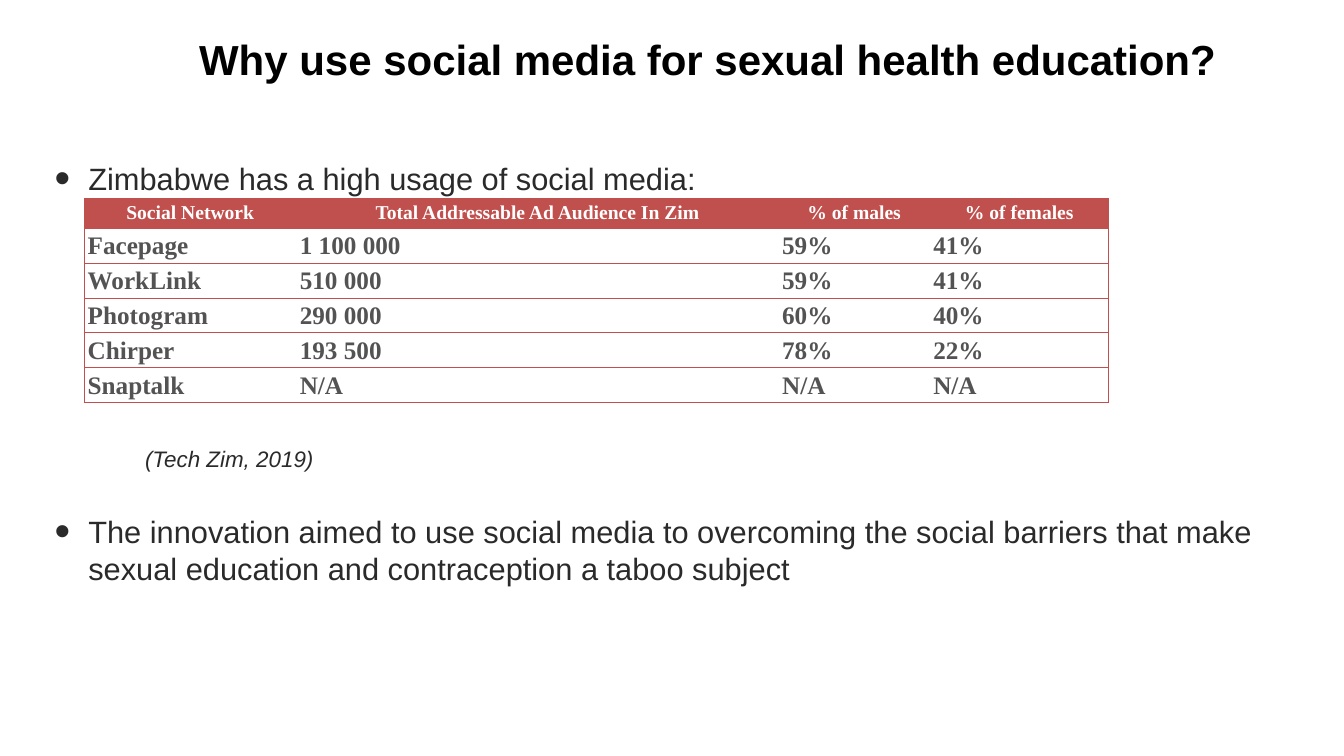
from pptx import Presentation
from pptx.dml.color import RGBColor
from pptx.enum.text import MSO_ANCHOR, PP_ALIGN
from pptx.oxml import parse_xml
from pptx.oxml.ns import nsdecls
from pptx.util import Cm, Pt

TOP, MIDDLE = MSO_ANCHOR.TOP, MSO_ANCHOR.MIDDLE
LEFT, CENTER = PP_ALIGN.LEFT, PP_ALIGN.CENTER
RED, WHITE, BLACK = "C0504D", "FFFFFF", "000000"
INK, GREY = "2A2A2A", "535353"
SANS, SERIF = "Arial", "Times New Roman"

HEADS = ["Social Network", "Total Addressable Ad Audience In Zim",
         "% of males", "% of females"]
USAGE = [
    ["Facepage", "1 100 000", "59%", "41%"],
    ["WorkLink", "510 000", "59%", "41%"],
    ["Photogram", "290 000", "60%", "40%"],
    ["Chirper", "193 500", "78%", "22%"],
    ["Snaptalk", "N/A", "N/A", "N/A"],
]
WIDTHS = [10.69, 24.31, 7.62, 9.02]
ROW = 1.5


def color(code):
    return RGBColor.from_string(code)


class Deck:
    """Holds the style and the current slide, and adds its elements."""

    def __init__(self, width, height):
        self.show = Presentation()
        self.show.slide_width, self.show.slide_height = Cm(width), Cm(height)
        self.slide = self.show.slides.add_slide(self.show.slide_layouts[6])
        self.inset = 0.21

    def style(self, para, size, face, ink, bold=False, italic=False):
        for run in para.runs:
            font = run.font
            font.size, font.name = Pt(size), face
            font.bold, font.italic = bold, italic
            font.color.rgb = color(ink)

    def box(self, left, top, width, height, anchor, above):
        shape = self.slide.shapes.add_textbox(
            Cm(left), Cm(top), Cm(width), Cm(height))
        frame = shape.text_frame
        frame.word_wrap = True
        frame.vertical_anchor = anchor
        frame.margin_left = frame.margin_right = Cm(self.inset)
        frame.margin_top, frame.margin_bottom = Cm(above), Cm(self.inset)
        return frame

    def title(self, text, left, top, width, height):
        para = self.box(left, top, width, height, MIDDLE, self.inset).paragraphs[0]
        para.text = text
        para.alignment = CENTER
        self.style(para, 60, SANS, BLACK, bold=True)

    def bullet(self, para, text):
        para.text = text
        props = para._p.get_or_add_pPr()
        props.set("marL", str(Cm(1.7)))
        props.set("indent", str(Cm(-1.7)))
        for tag in ('buSzPct val="145000"', 'buFont typeface="Arial"', 'buChar char="•"'):
            props.append(parse_xml(f"<a:{tag} {nsdecls('a')}/>"))
        self.style(para, 44, SANS, INK)

    def cite(self, para, text):
        para.text = text
        para._p.get_or_add_pPr().set("marL", str(Cm(4.56)))
        self.style(para, 32, SANS, INK, italic=True)

    def border(self, cell, sides):
        props = cell._tc.get_or_add_tcPr()
        for side in "LRTB":
            fill = "<a:noFill/>"
            if side in sides:
                fill = f'<a:solidFill><a:srgbClr val="{RED}"/></a:solidFill>'
            props.append(parse_xml(
                f'<a:ln{side} w="{Pt(1)}" {nsdecls("a")}>{fill}</a:ln{side}>'))

    def cell(self, cell, text, head, sides):
        self.border(cell, sides)
        if head:
            cell.fill.solid()
            cell.fill.fore_color.rgb = color(RED)
        else:
            cell.fill.background()
        cell.margin_left = cell.margin_right = Cm(0.18)
        cell.margin_top = cell.margin_bottom = 0
        para = cell.text_frame.paragraphs[0]
        para.text = text
        para.alignment = CENTER if head else LEFT
        para.line_spacing = 1.15
        self.style(para, 28 if head else 36, SERIF, WHITE if head else GREY, bold=True)

    def table(self, rows, widths, left, top):
        table = self.slide.shapes.add_table(
            len(rows), len(widths), Cm(left), Cm(top),
            Cm(sum(widths)), Cm(ROW * len(rows))).table
        table.horz_banding = False
        for col, width in zip(table.columns, widths):
            col.width = Cm(width)
        ends = {0: "LTB", len(widths) - 1: "RTB"}
        for r, row in enumerate(rows):
            table.rows[r].height = Cm(ROW)
            for c, text in enumerate(row):
                self.cell(table.cell(r, c), text, r == 0, ends.get(c, "TB"))


def main():
    deck = Deck(67.74, 38.1)
    deck.title("Why use social media for sexual health education?", 6.98, 1.07, 57.4, 3.81)

    body = deck.box(2.54, 4.88, 62.43, 29.74, TOP, 3.18)
    deck.bullet(body.paragraphs[0], "Zimbabwe has a high usage of social media:")
    source = body.add_paragraph()
    deck.cite(source, "(Tech Zim, 2019)")
    source.space_before = Pt(354)
    aim = body.add_paragraph()
    deck.bullet(aim, "The innovation aimed to use social media to overcoming the social "
                     "barriers that make sexual education and contraception a taboo subject")
    aim.space_before = Pt(59)

    deck.table([HEADS] + USAGE, WIDTHS, 4.24, 10.01)
    deck.show.save("out.pptx")


if __name__ == "__main__":
    main()
